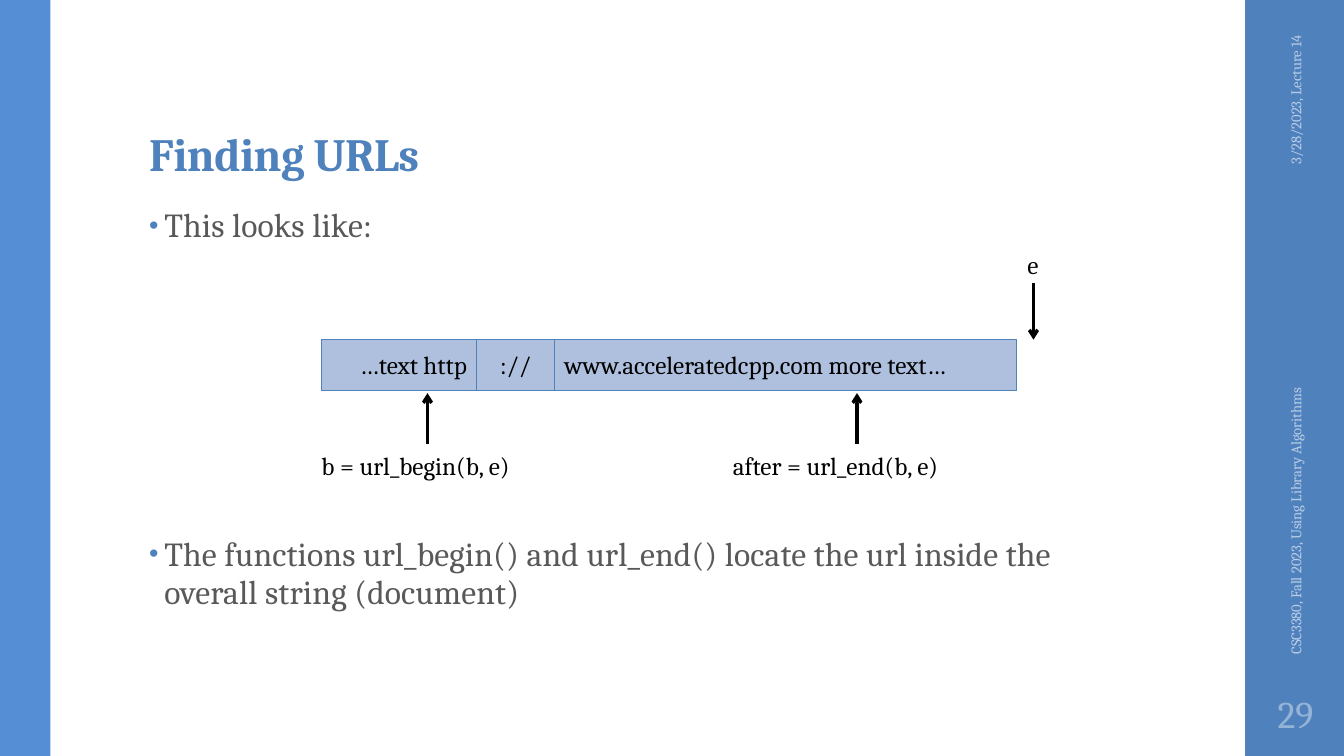
from dataclasses import dataclass

from lxml import etree
from pptx import Presentation
from pptx import util as u
from pptx.dml.color import RGBColor
from pptx.enum import shapes, text
from pptx.oxml import ns

Inches, Pt = u.Inches, u.Pt


@dataclass(frozen=True)
class Theme:
    font: str = "Cambria"
    accent: str = "4F81BD"
    left_bar: str = "558ED5"
    body: str = "595959"
    cell: str = "AFC0DF"
    ink: str = "000000"
    side_text: str = "B9CDE5"
    number: str = "95B3D7"
    title_size: float = 33
    body_size: float = 24
    diagram_size: float = 18
    side_size: float = 10.5
    number_size: float = 27


THEME = Theme()
ALIGN = text.PP_ALIGN
ANCHOR = text.MSO_ANCHOR


def apply(target, values):
    for name, value in values.items():
        setattr(target, name, value)


def place(shape, left, top, width, height):
    box = dict(left=left, top=top, width=width, height=height)
    apply(shape, {name: Inches(value) for name, value in box.items()})


def write(paragraph, content, size, color, bold=False, spacing=0, **values):
    run = paragraph.add_run()
    run.text = content
    apply(paragraph, values)
    apply(run.font, dict(name=THEME.font, size=Pt(size), bold=bold))
    run.font.color.rgb = RGBColor.from_string(color)
    if spacing:
        run.font._element.set("spc", str(spacing))


def add_bullet(paragraph):
    properties = paragraph._p.get_or_add_pPr()
    properties.set("marL", str(Inches(0.15)))
    properties.set("indent", str(Inches(-0.15)))
    color = etree.SubElement(properties, ns.qn("a:buClr"))
    etree.SubElement(color, ns.qn("a:srgbClr"), val=THEME.accent)
    etree.SubElement(properties, ns.qn("a:buSzPct"), val="80000")
    etree.SubElement(properties, ns.qn("a:buFont"), typeface="Arial")
    etree.SubElement(properties, ns.qn("a:buChar"), char="•")


def fill_title(shape, content):
    place(shape, 1.38, 0.32, 10.6, 1.53)
    frame = shape.text_frame
    apply(frame, dict(vertical_anchor=ANCHOR.BOTTOM, word_wrap=True,
                      auto_size=text.MSO_AUTO_SIZE.NONE,
                      margin_top=Inches(0.03)))
    write(frame.paragraphs[0], content, THEME.title_size, THEME.accent,
          bold=True, spacing=-40, alignment=ALIGN.LEFT, line_spacing=0.9)


def fill_body(shape, items):
    place(shape, 1.38, 2, 9.4, 4.76)
    frame = shape.text_frame
    apply(frame, dict(vertical_anchor=ANCHOR.TOP, word_wrap=True,
                      auto_size=text.MSO_AUTO_SIZE.NONE))
    for index, (content, gap) in enumerate(items):
        paragraph = frame.add_paragraph() if index else frame.paragraphs[0]
        add_bullet(paragraph)
        write(paragraph, content, THEME.body_size, THEME.body, spacing=10,
              alignment=ALIGN.LEFT, line_spacing=0.95,
              space_before=Pt(gap), space_after=Pt(1.5))


def add_rectangle(slide, box, fill, line=None):
    shape = slide.shapes.add_shape(shapes.MSO_SHAPE.RECTANGLE,
                                   *map(Inches, box))
    shape.shadow.inherit = False
    shape.fill.solid()
    shape.fill.fore_color.rgb = RGBColor.from_string(fill)
    if line:
        shape.line.color.rgb = RGBColor.from_string(line)
        shape.line.width = Pt(0.75)
    else:
        shape.line.fill.background()
    return shape


def add_cell(slide, left, width, content, alignment):
    shape = add_rectangle(slide, (left, 3.37, width, 0.5),
                          THEME.cell, THEME.accent)
    apply(shape.text_frame, dict(vertical_anchor=ANCHOR.MIDDLE,
                                 word_wrap=True))
    write(shape.text_frame.paragraphs[0], content, THEME.diagram_size,
          THEME.ink, alignment=alignment)


def add_text(slide, box, content, size, color, alignment=ALIGN.LEFT,
             rotation=0, **frame_values):
    shape = slide.shapes.add_textbox(*map(Inches, box))
    shape.rotation = rotation
    apply(shape.text_frame, dict(word_wrap=True) | frame_values)
    write(shape.text_frame.paragraphs[0], content, size, color,
          alignment=alignment)


def add_label(slide, left, top, width, content):
    add_text(slide, (left, top, width, 0.4), content, THEME.diagram_size,
             THEME.ink, word_wrap=False,
             auto_size=text.MSO_AUTO_SIZE.SHAPE_TO_FIT_TEXT)


def add_arrow(slide, x, start, end):
    arrow = slide.shapes.add_connector(
        shapes.MSO_CONNECTOR.STRAIGHT, *map(Inches, (x, start, x, end)))
    arrow.line.color.rgb = RGBColor.from_string(THEME.ink)
    arrow.line.width = Pt(2.25)
    etree.SubElement(arrow.line._get_or_add_ln(), ns.qn("a:tailEnd"),
                     type="arrow")
    etree.SubElement(arrow._element.spPr, ns.qn("a:effectLst"))


def add_side_bars(slide):
    add_rectangle(slide, (12.35, 0, 1, 7.5), THEME.accent)
    add_rectangle(slide, (0, 0, 0.5, 7.5), THEME.left_bar)
    for box, content, alignment in (
        ((11.81, 1.09, 2.08, 0.4), "3/28/2023, Lecture 14", ALIGN.RIGHT),
        ((10.89, 4.43, 3.92, 0.4),
         "CSC3380, Fall 2023, Using Library Algorithms", ALIGN.LEFT),
    ):
        add_text(slide, box, content, THEME.side_size, THEME.side_text,
                 alignment, 270, vertical_anchor=ANCHOR.MIDDLE)
    add_text(slide, (12.35, 6.75, 1, 0.65), "29", THEME.number_size,
             THEME.number, ALIGN.CENTER, vertical_anchor=ANCHOR.MIDDLE,
             margin_left=Inches(0.05), margin_right=Inches(0.05))


def add_string_diagram(slide):
    left = 3.19
    for width, content, alignment in (
        (1.54, "…text http", ALIGN.RIGHT),
        (0.77, "://", ALIGN.CENTER),
        (4.58, "www.acceleratedcpp.com more text…", ALIGN.LEFT),
    ):
        add_cell(slide, left, width, content, alignment)
        left += width
    for x, start, end in ((4.24, 4.4, 3.9), (8.5, 4.4, 3.9),
                          (10.25, 2.81, 3.37)):
        add_arrow(slide, x, start, end)
    add_label(slide, 3.09, 4.42, 2.07, "b = url_begin(b, e)")
    add_label(slide, 7.17, 4.42, 2.24, "after = url_end(b, e)")
    add_label(slide, 10.09, 2.42, 0.32, "e")


def main():
    presentation = Presentation()
    apply(presentation, dict(slide_width=Inches(13.33),
                             slide_height=Inches(7.5)))
    slide = presentation.slides.add_slide(presentation.slide_layouts[1])
    fill_title(slide.shapes.title, "Finding URLs")
    fill_body(slide.placeholders[1], (
        ("This looks like:", 0),
        ("The functions url_begin() and url_end() locate the url inside "
         "the overall string (document)", 206),
    ))
    add_side_bars(slide)
    add_string_diagram(slide)
    presentation.save("out.pptx")


if __name__ == "__main__":
    main()
